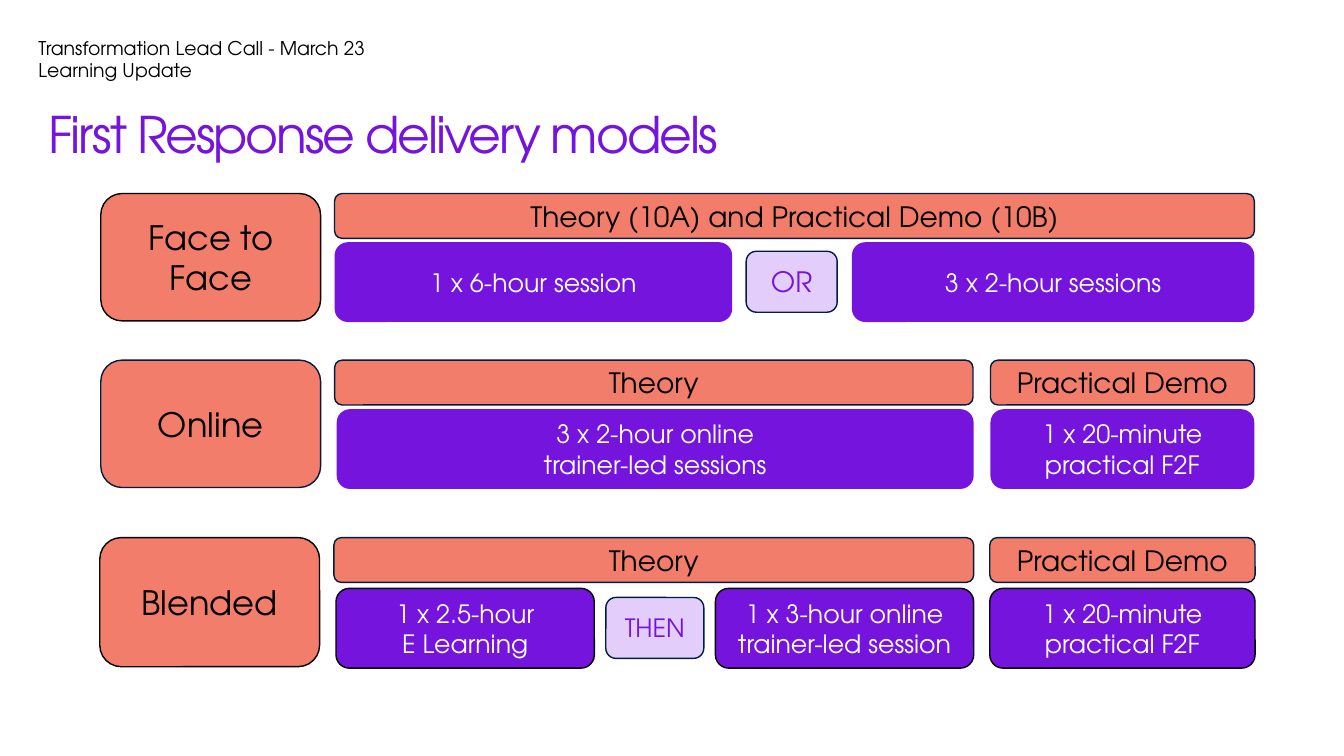
from pptx import Presentation
from pptx.dml.color import RGBColor
from pptx.enum.shapes import MSO_SHAPE
from pptx.enum.text import MSO_ANCHOR, MSO_AUTO_SIZE, PP_ALIGN
from pptx.util import Pt

ROUNDED = MSO_SHAPE.ROUNDED_RECTANGLE
LEFT, CENTER = PP_ALIGN.LEFT, PP_ALIGN.CENTER
TOP, MIDDLE, BOTTOM = MSO_ANCHOR.TOP, MSO_ANCHOR.MIDDLE, MSO_ANCHOR.BOTTOM
FONT = "TeX Gyre Adventor"
COLORS = {
    "coral": "F37D6B",
    "purple": "7414DC",
    "lilac": "E3CEFB",
    "navy": "001D41",
    "black": "000000",
    "white": "FFFFFF",
}


def write(frame, text, size=18, color="black", align=LEFT, anchor=TOP,
          line_spacing=None, tracking=None):
    """Fill a text frame, one paragraph for each line of text."""
    frame.word_wrap = True
    frame.auto_size = MSO_AUTO_SIZE.NONE
    frame.vertical_anchor = anchor
    for number, line in enumerate(text.split("\n")):
        paragraph = frame.add_paragraph() if number else frame.paragraphs[0]
        paragraph.alignment = align
        paragraph.space_before = Pt(0)
        if line_spacing:
            paragraph.line_spacing = Pt(line_spacing)
        run = paragraph.add_run()
        run.text = line
        run.font.name = FONT
        run.font.size = Pt(size)
        run.font.color.rgb = RGBColor.from_string(COLORS[color])
        if tracking:
            run.font._element.set("spc", str(int(tracking * 100)))


def add_block(left, top, width, height, text, size, fill, color, outline=None):
    block = slide.shapes.add_shape(ROUNDED, Pt(left), Pt(top), Pt(width), Pt(height))
    block.shadow.inherit = False
    block.fill.solid()
    block.fill.fore_color.rgb = RGBColor.from_string(COLORS[fill])
    if outline:
        block.line.color.rgb = RGBColor.from_string(COLORS[outline])
        block.line.width = Pt(1)
    else:
        block.line.fill.background()
    write(block.text_frame, text, size, color, CENTER, MIDDLE)


deck = Presentation()
deck.slide_width, deck.slide_height = Pt(960), Pt(540)
slide = deck.slides.add_slide(deck.slide_layouts[0])

call_name, call_topic = slide.placeholders
for heading, text, top, anchor in (
    (call_name, "Transformation Lead Call - March 23", 26, BOTTOM),
    (call_topic, "Learning Update", 42, TOP),
):
    heading.left, heading.top = Pt(27.5), Pt(top)
    heading.width, heading.height = Pt(453), Pt(16.5)
    frame = heading.text_frame
    frame.margin_left = frame.margin_top = frame.margin_right = frame.margin_bottom = 0
    write(frame, text, 13.5, anchor=anchor)

models_heading = slide.shapes.add_textbox(Pt(27.5), Pt(63.5), Pt(600), Pt(56))
write(models_heading.text_frame, "First Response delivery models", 36, "purple",
      line_spacing=49.5, tracking=-1.5)

# Stages and sessions: text, left, width. Link: text, left, width, size.
models = [
    {
        "name": "Face to Face", "top": 138.25, "left": 72, "height": 91,
        "name_outline": "black", "session_outline": None, "session_drop": 34.75,
        "stages": [("Theory (10A) and Practical Demo (10B)", 239, 657)],
        "sessions": [("1 x 6-hour session", 239, 284), ("3 x 2-hour sessions", 608.5, 287.5)],
        "link": ("OR", 533, 65, 20),
    },
    {
        "name": "Online", "top": 257.25, "left": 72, "height": 91,
        "name_outline": "navy", "session_outline": None, "session_drop": 35,
        "stages": [("Theory", 239, 456), ("Practical Demo", 707.5, 188.5)],
        "sessions": [("3 x 2-hour online\ntrainer-led sessions", 240.5, 455),
                     ("1 x 20-minute practical F2F", 707.5, 188.5)],
        "link": None,
    },
    {
        "name": "Blended", "top": 384, "left": 71.25, "height": 92.25,
        "name_outline": "black", "session_outline": "black", "session_drop": 36.25,
        "stages": [("Theory", 238.5, 457), ("Practical Demo", 707, 189.5)],
        "sessions": [("1 x 2.5-hour\nE Learning", 240, 184.5),
                     ("1 x 3-hour online trainer-led session", 511, 184.5),
                     ("1 x 20-minute practical F2F", 707, 189.5)],
        "link": ("THEN", 432.75, 70, 18),
    },
]

for model in models:
    top = model["top"]
    session_top = top + model["session_drop"]
    add_block(model["left"], top, 157, model["height"], model["name"], 24,
              "coral", "black", model["name_outline"])
    for text, left, width in model["stages"]:
        add_block(left, top, width, 32, text, 20, "coral", "black", "navy")
    for text, left, width in model["sessions"]:
        add_block(left, session_top, width, 57, text, 18,
                  "purple", "white", model["session_outline"])
    if model["link"]:
        text, left, width, size = model["link"]
        add_block(left, session_top + 6.5, width, 43.5, text, size,
                  "lilac", "purple", "navy")

deck.save("out.pptx")
